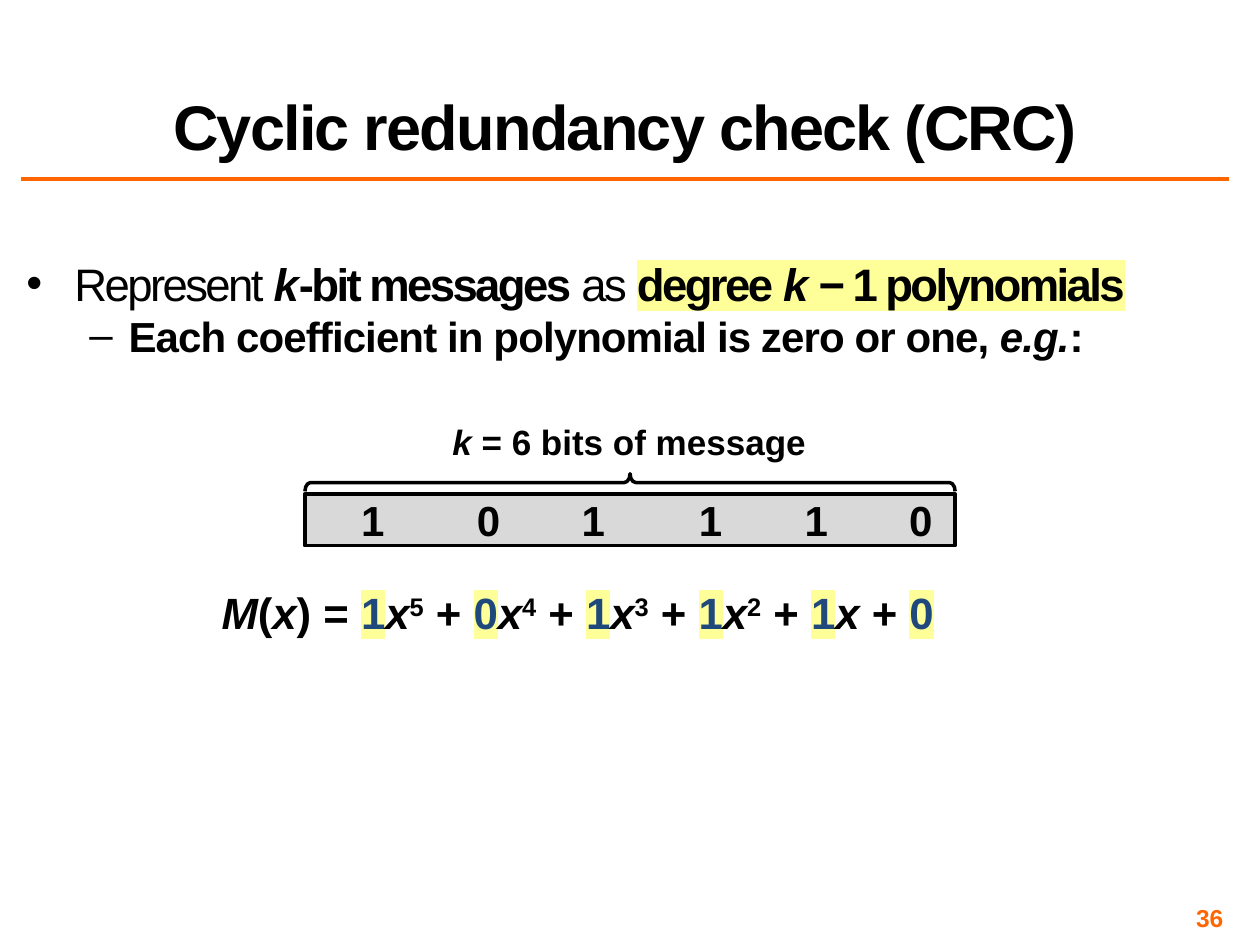
"""Build the slide on cyclic redundancy checks and message polynomials."""
from lxml.etree import SubElement
from pptx import Presentation
from pptx.dml.color import RGBColor
from pptx.enum.shapes import MSO_CONNECTOR as Connector, MSO_SHAPE as Shape
from pptx.enum.text import MSO_ANCHOR as Anchor, PP_ALIGN as Align
from pptx.oxml.ns import qn
from pptx.util import Inches, Pt

COLUMNS, ROWS = 10, 7.5
BLACK, ORANGE, BLUE, YELLOW, GREY = "000000", "FF6600", "1F497D", "FFFF99", "D9D9D9"
LEFT, WIDTH = 0.17, 9.58
BAR_LEFT, BAR_TOP, BAR_WIDTH, BAR_HEIGHT = 2.42, 3.92, 5.16, 0.41
BRACE_DEPTH, BRACE_TOP = 0.14, 3.76
SIDE_INSET = 0.1

BOLD = {"bold": True}
BOLD_ITALIC = {"bold": True, "italic": True}
MARKED = {"bold": True, "highlight": YELLOW}
MARKED_ITALIC = MARKED | BOLD_ITALIC
COEFFICIENT = MARKED | {"color": BLUE}
POWER = {"bold": True, "baseline": "30000"}

TITLE = [("Cyclic redundancy check (CRC)", BOLD)]
MAIN_POINT = [("Represent ", {}), ("k", BOLD_ITALIC), ("-bit messages ", BOLD), ("as ", {}),
              ("degree ", MARKED), ("k ", MARKED_ITALIC), ("− 1 polynomials", MARKED)]
SUB_POINT = [("Each coefficient in polynomial is zero or one, ", BOLD),
             ("e.g.", BOLD_ITALIC), (":", BOLD)]
BIT_LABEL = [("k", BOLD_ITALIC), (" = 6 bits of message", BOLD)]
FUNCTION = [("M", BOLD_ITALIC), ("(", BOLD), ("x", BOLD_ITALIC), (") = ", BOLD)]
BITS = "101110"
BIT_CENTERS = [2.96, 3.88, 4.71, 5.64, 6.48, 7.31]
PAGE_NUMBER = [("36", BOLD)]
BULLETS = [
    {"spans": MAIN_POINT, "size": 26, "spacing": -1.5, "level": 0, "mark": "•",
     "indent": 0.38, "hang": 0.38},
    {"spans": SUB_POINT, "size": 24, "spacing": -0.5, "level": 1, "mark": "–",
     "indent": 0.81, "hang": 0.31},
]


def rgb(color):
    return RGBColor.from_string(color)


def place(deck, *cells):
    return [round(cell * deck.slide_width / COLUMNS) for cell in cells]


def set_values(target, values):
    for name, value in values.items():
        setattr(target, name, value)


def add_spans(para, spans, size, color=BLACK, spacing=0):
    for text, style in spans:
        span = para.add_run()
        span.text = text
        set_values(span.font, {"name": "Arial", "size": Pt(size),
                               "bold": style.get("bold", False),
                               "italic": style.get("italic", False)})
        span.font.color.rgb = rgb(style.get("color", color))
        props = span.font._element
        if spacing:
            props.set("spc", str(round(spacing * 100)))
        if "baseline" in style:
            props.set("baseline", style["baseline"])
        if "highlight" in style:
            mark = SubElement(props, qn("a:highlight"))
            SubElement(mark, qn("a:srgbClr"), val=style["highlight"])
            props.find(qn("a:solidFill")).addnext(mark)


def add_box(deck, page, cells, **frame_values):
    box = page.shapes.add_textbox(*place(deck, *cells))
    set_values(box.text_frame, {"word_wrap": True} | frame_values)
    return box.text_frame


def add_outline(deck, page, kind, cells, width):
    shape = page.shapes.add_shape(kind, *place(deck, *cells))
    shape.shadow.inherit = False
    shape.line.color.rgb = rgb(BLACK)
    shape.line.width = Pt(width)
    return shape


def add_bullet(para, bullet):
    set_values(para, {"line_spacing": 0.8, "space_before": Pt(bullet["size"] * 0.24),
                      "level": bullet["level"]})
    props = para._p.get_or_add_pPr()
    props.set("marL", str(Inches(bullet["indent"])))
    props.set("indent", str(-Inches(bullet["hang"])))
    SubElement(props, qn("a:buFont"), typeface="Arial")
    SubElement(props, qn("a:buChar"), char=bullet["mark"])
    add_spans(para, bullet["spans"], bullet["size"], spacing=bullet["spacing"])


def add_heading(deck, page):
    rule = page.shapes.add_connector(
        Connector.STRAIGHT, *place(deck, LEFT, 1.42, LEFT + WIDTH, 1.42))
    rule.line.color.rgb = rgb(ORANGE)
    rule.line.width = Pt(2)
    SubElement(rule._element.spPr, qn("a:effectLst"))
    frame = add_box(deck, page, (LEFT, 0.17, WIDTH, 1.17), vertical_anchor=Anchor.BOTTOM)
    para = frame.paragraphs[0]
    set_values(para, {"alignment": Align.CENTER, "line_spacing": 0.8})
    add_spans(para, TITLE, 36, spacing=-1)


def add_body(deck, page):
    inset = Inches(0.04)
    frame = add_box(deck, page, (LEFT, 1.5, WIDTH, 2.15), vertical_anchor=Anchor.BOTTOM,
                    margin_left=inset, margin_right=inset, margin_top=inset,
                    margin_bottom=Inches(0.87))
    for index, bullet in enumerate(BULLETS):
        para = frame.add_paragraph() if index else frame.paragraphs[0]
        add_bullet(para, bullet)


def add_message(deck, page):
    bar = add_outline(deck, page, Shape.RECTANGLE,
                      (BAR_LEFT, BAR_TOP, BAR_WIDTH, BAR_HEIGHT), 2.25)
    bar.fill.solid()
    bar.fill.fore_color.rgb = rgb(GREY)
    bar.text_frame.vertical_anchor = Anchor.MIDDLE
    para = bar.text_frame.paragraphs[0]
    para.alignment = Align.LEFT
    stops = SubElement(para._p.get_or_add_pPr(), qn("a:tabLst"))
    for center in BIT_CENTERS:
        SubElement(stops, qn("a:tab"), algn="ctr",
                   pos=str(Inches(center - BAR_LEFT - SIDE_INSET)))
    add_spans(para, [("".join("\t" + bit for bit in BITS), BOLD)], 24)

    brace_left = BAR_LEFT + (BAR_WIDTH - BRACE_DEPTH) / 2
    brace_top = BRACE_TOP + (BRACE_DEPTH - BAR_WIDTH) / 2
    brace = add_outline(deck, page, Shape.LEFT_BRACE,
                        (brace_left, brace_top, BRACE_DEPTH, BAR_WIDTH), 2)
    brace.fill.background()
    brace.rotation = 90
    brace.adjustments[0] = 0.32

    label = add_box(deck, page, (3.48, 3.29, 3.03, 0.44), word_wrap=False).paragraphs[0]
    label.alignment = Align.CENTER
    add_spans(label, BIT_LABEL, 20)


def polynomial(bits):
    spans = list(FUNCTION)
    for power, bit in zip(reversed(range(len(bits))), bits):
        spans.append((bit, COEFFICIENT))
        if power:
            spans.append(("x", BOLD_ITALIC))
            if power > 1:
                spans.append((str(power), POWER))
            spans.append((" + ", BOLD))
    return spans


def add_polynomial(deck, page):
    para = add_box(deck, page, (1.02, 4.6, 7.13, 0.52)).paragraphs[0]
    para.alignment = Align.CENTER
    add_spans(para, polynomial(BITS), 25)


def add_page_number(deck, page):
    sides = ("left", "right", "top", "bottom")
    margins = {f"margin_{side}": Inches(0.04) for side in sides}
    frame = add_box(deck, page, (7.42, 7.17, 2.33, 0.23),
                    vertical_anchor=Anchor.MIDDLE, **margins)
    frame.paragraphs[0].alignment = Align.RIGHT
    add_spans(frame.paragraphs[0], PAGE_NUMBER, 14, ORANGE)


def main():
    deck = Presentation()
    set_values(deck, {"slide_width": Inches(COLUMNS), "slide_height": Inches(ROWS)})
    page = deck.slides.add_slide(deck.slide_layouts[6])
    for add_part in (add_heading, add_body, add_message, add_page_number, add_polynomial):
        add_part(deck, page)
    deck.save("out.pptx")


if __name__ == "__main__":
    main()
